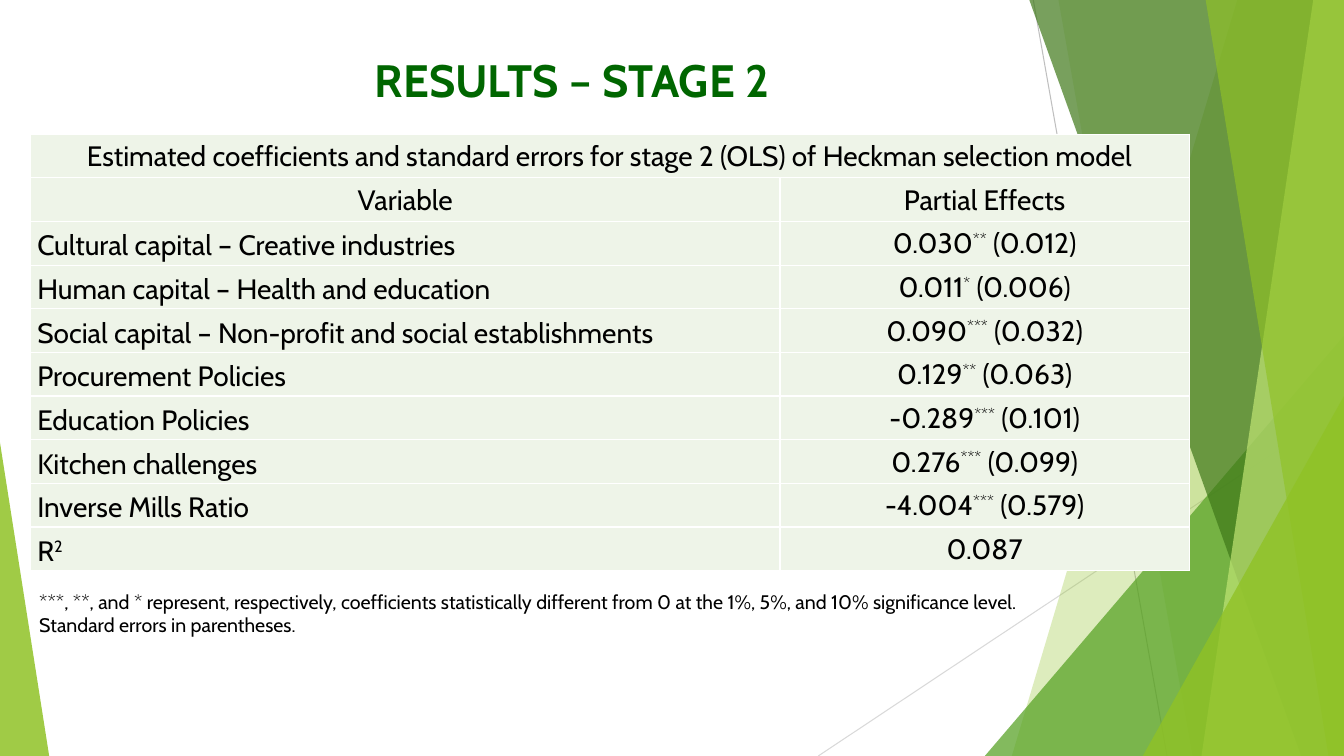
"""Builds the slide with the stage 2 regression results."""
from lxml import etree
from pptx import Presentation
from pptx.dml.color import RGBColor
from pptx.enum.shapes import MSO_CONNECTOR, MSO_SHAPE
from pptx.enum.text import MSO_ANCHOR, MSO_AUTO_SIZE, PP_ALIGN
from pptx.oxml import parse_xml
from pptx.oxml.ns import qn
from pptx.util import Cm, Pt

STRAIGHT = MSO_CONNECTOR.STRAIGHT
TRIANGLE = MSO_SHAPE.ISOSCELES_TRIANGLE
MIDDLE = MSO_ANCHOR.MIDDLE
LEFT, CENTER = PP_ALIGN.LEFT, PP_ALIGN.CENTER
NAMESPACE = "http://schemas.openxmlformats.org/drawingml/2006/main"
WIDTH, HEIGHT = 33.87, 19.05
TOP = -0.03


def paint(fill, color, opacity=100):
    fill.solid()
    fill.fore_color.rgb = RGBColor.from_string(color)
    if opacity < 100:
        color_node = fill.fore_color._xFill[0]
        etree.SubElement(color_node, qn("a:alpha")).set("val", str(opacity * 1000))


def write(para, text, size, color="000000", bold=False):
    for index, part in enumerate(text.split("^")):
        span = para.add_run()
        span.text = part
        span.font.name = "Cabin"
        span.font.size = Pt(size)
        span.font.bold = bold
        paint(span.font.fill, color)
        if index % 2:
            span.font._element.set("baseline", "30000")


deck = Presentation()
deck.slide_width, deck.slide_height = Cm(WIDTH), Cm(HEIGHT)
page = deck.slides.add_slide(deck.slide_layouts[5])

for x1, y1, x2, y2, color in [
    (26.04, 0, 29.41, HEIGHT, "BFBFBF"),
    (WIDTH, 10.24, 20.62, HEIGHT, "D9D9D9"),
]:
    line = page.shapes.add_connector(STRAIGHT, Cm(x1), Cm(y1), Cm(x2), Cm(y2))
    line.line.width = Pt(0.75)
    paint(line.line.fill, color)
    etree.SubElement(line._element.spPr, qn("a:effectLst"))

facets = [
    ("band", 31.19, 25.5, "90C226", 30),
    ("band", 26.67, 30.05, "90C226", 20),
    ("triangle", 24.82, 8.46, "54A021", 72),
    ("band", 25.93, 32.79, "3F7819", 70),
    ("band", 33.1, 30.28, "C0E474", 70),
    ("band", 30.38, 33.48, "90C226", 65),
    ("triangle", 28.8, 9.98, "90C226", 80),
    ("left triangle", 0, 11.15, "90C226", 85),
]
for kind, first, second, color, opacity in facets:
    if kind == "band":
        outline = page.shapes.build_freeform(Cm(first), Cm(TOP))
        corners = [(WIDTH, TOP), (WIDTH, HEIGHT), (second, HEIGHT)]
        outline.add_line_segments([(Cm(x), Cm(y)) for x, y in corners])
        facet = outline.convert_to_shape()
    else:
        on_left = kind == "left triangle"
        width = 1.24 if on_left else WIDTH - first
        facet = page.shapes.add_shape(
            TRIANGLE, Cm(first), Cm(second), Cm(width), Cm(HEIGHT - second))
        facet.adjustments[0] = 0 if on_left else 1
    facet.shadow.inherit = False
    facet.line.fill.background()
    paint(facet.fill, color, opacity)

title = page.shapes.title
title.element.getparent().append(title.element)
title.left, title.top, title.width, title.height = Cm(0.76), Cm(1.19), Cm(27.31), Cm(1.6)
title.text_frame.auto_size = MSO_AUTO_SIZE.NONE
title.text_frame.vertical_anchor = MIDDLE
title.text_frame.paragraphs[0].alignment = CENTER
write(title.text_frame.paragraphs[0], "RESULTS – STAGE 2", 32.4, "006600", True)

rows = [
    ("Estimated coefficients and standard errors for stage 2 (OLS) of Heckman selection model", ""),
    ("Variable", "Partial Effects"),
    ("Cultural capital – Creative industries", "0.030^**^ (0.012)"),
    ("Human capital – Health and education", "0.011^*^ (0.006)"),
    ("Social capital – Non-profit and social establishments", "0.090^***^ (0.032)"),
    ("Procurement Policies", "0.129^**^ (0.063)"),
    ("Education Policies", "-0.289^***^ (0.101)"),
    ("Kitchen challenges", "0.276^***^ (0.099)"),
    ("Inverse Mills Ratio", "-4.004^***^ (0.579)"),
    ("R^2", "0.087"),
]
table = page.shapes.add_table(
    len(rows), 2, Cm(0.76), Cm(3.38), Cm(29.21), Cm(1.1 * len(rows))).table
table.first_row = table.horz_banding = False
table.columns[0].width, table.columns[1].width = Cm(18.9), Cm(10.31)
for row_index, row in enumerate(rows):
    table.rows[row_index].height = Cm(1.1)
    for column_index, text in enumerate(row):
        cell = table.cell(row_index, column_index)
        is_label = row_index > 1 and column_index == 0
        cell.vertical_anchor = MIDDLE
        cell.margin_left = cell.margin_right = Cm(0.18 if is_label else 0.03)
        cell.margin_top = Cm(0 if is_label else 0.03)
        cell.margin_bottom = Cm(0)
        for side in ("lnL", "lnR", "lnT", "lnB"):
            cell._tc.get_or_add_tcPr().append(parse_xml(
                f'<a:{side} xmlns:a="{NAMESPACE}" w="12700"><a:solidFill>'
                f'<a:srgbClr val="FFFFFF"/></a:solidFill></a:{side}>'))
        paint(cell.fill, "EEF4E8")
        para = cell.text_frame.paragraphs[0]
        para.alignment = LEFT if is_label else CENTER
        if is_label:
            para.line_spacing = 1.15
        if text:
            write(para, text, 20)
table.cell(0, 0).merge(table.cell(0, 1))

note = page.shapes.add_textbox(Cm(0.74), Cm(14.73), Cm(25.86), Cm(1.45))
note.text_frame.word_wrap = True
write(
    note.text_frame.paragraphs[0],
    "***, **, and * represent, respectively, coefficients statistically different from 0 "
    "at the 1%, 5%, and 10% significance level. Standard errors in parentheses.",
    14)

deck.save("out.pptx")
